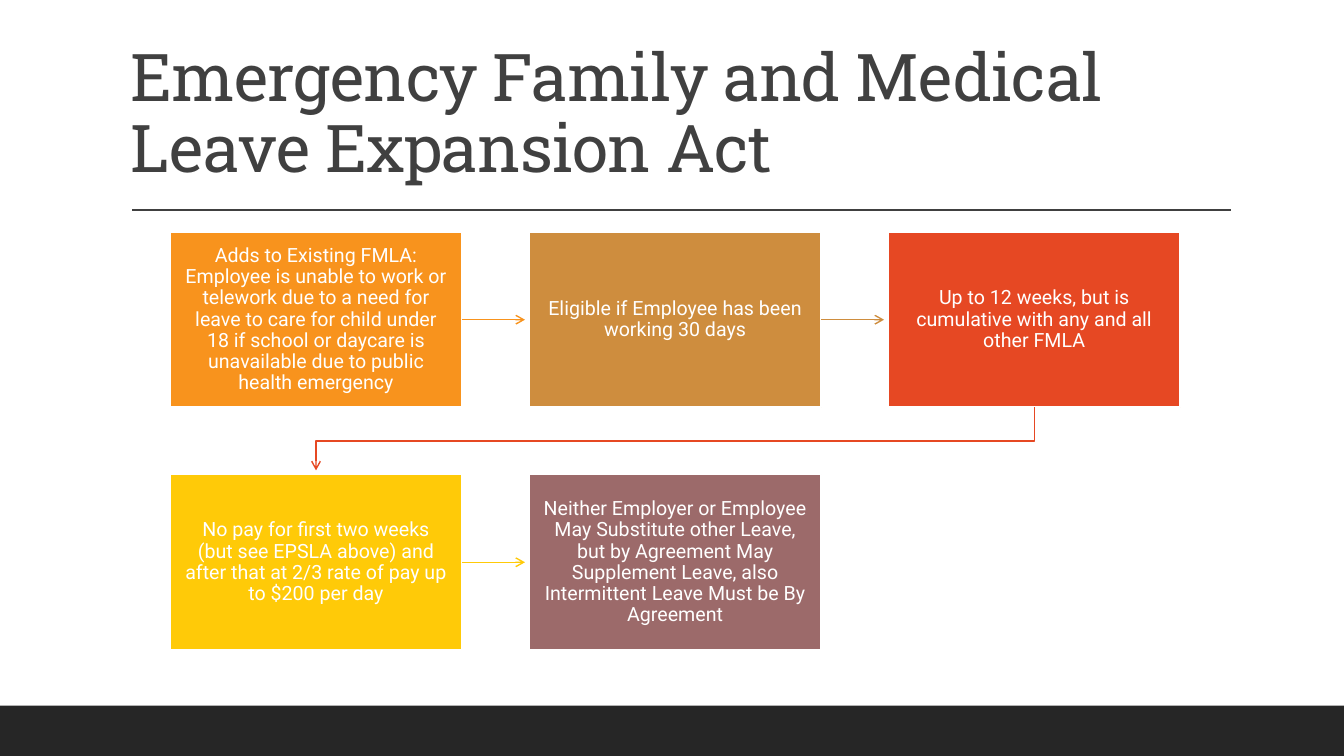
from dataclasses import dataclass

from lxml import etree
from pptx import Presentation
from pptx.dml.color import RGBColor
from pptx.enum.shapes import MSO_CONNECTOR as CONNECTOR, MSO_SHAPE as SHAPE
from pptx.enum.text import MSO_ANCHOR as ANCHOR, PP_ALIGN as ALIGN
from pptx.oxml.ns import qn
from pptx.util import Pt

PX = 9525  # EMU per px, 96 px to the inch
RIGHT_SIDE = 3


@dataclass(frozen=True)
class Theme:
    ink: str = "404040"
    footer: str = "262626"
    white: str = "FFFFFF"
    steps: tuple = ("F8931D", "CE8D3E", "E64823", "FFCA08", "9C6A6A")
    title_font: str = "Roboto Slab"
    body_font: str = "Roboto"
    title_size: int = 47
    body_size: int = 14
    thin: float = 1
    border: float = 1.25


THEME = Theme()
TITLE = "Emergency Family and Medical Leave Expansion Act"
STEPS = (
    "Adds to Existing FMLA: Employee is unable to work or telework due to a need "
    "for leave to care for child under 18 if school or daycare is unavailable due "
    "to public health emergency",
    "Eligible if Employee has been working 30 days",
    "Up to 12 weeks, but is cumulative with any and all other FMLA",
    "No pay for first two weeks (but see EPSLA above) and after that at 2/3 rate "
    "of pay up to $200 per day",
    "Neither Employer or Employee May Substitute other Leave, but by Agreement May "
    "Supplement Leave, also Intermittent Leave Must be By Agreement",
)


def px(*lengths):
    return [length * PX for length in lengths]


def style_line(line, color, width, arrow=False):
    line.color.rgb = RGBColor.from_string(color)
    line.width = Pt(width)
    if arrow:
        etree.SubElement(line._get_or_add_ln(), qn("a:tailEnd"), type="arrow")


def add_block(slide, box, color):
    block = slide.shapes.add_shape(SHAPE.RECTANGLE, *px(*box))
    block.shadow.inherit = False
    block.fill.solid()
    block.fill.fore_color.rgb = RGBColor.from_string(color)
    block.line.fill.background()
    return block


def add_straight(slide, start, end, color, arrow=False):
    straight = slide.shapes.add_connector(CONNECTOR.STRAIGHT, *px(*start, *end))
    style_line(straight.line, color, THEME.thin, arrow)
    etree.SubElement(straight._element.spPr, qn("a:effectLst"))
    return straight


def write(frame, words, font, size, color, align):
    frame.word_wrap = True
    paragraph = frame.paragraphs[0]
    paragraph.alignment = align
    paragraph.line_spacing = 0.9
    paragraph.font.name = font
    paragraph.font.size = Pt(size)
    paragraph.font.color.rgb = RGBColor.from_string(color)
    run = paragraph.add_run()
    run.text = words
    return run


def add_heading(slide, left, top, width, height):
    """Title with the rule below it."""
    frame = slide.shapes.add_textbox(*px(left, top, width, height)).text_frame
    frame.vertical_anchor = ANCHOR.BOTTOM
    run = write(frame, TITLE, THEME.title_font, THEME.title_size, THEME.ink, ALIGN.LEFT)
    run._r.get_or_add_rPr().set("spc", "-50")
    rule_y = top + height + 17
    add_straight(slide, (left + 11, rule_y), (left + width + 1, rule_y), THEME.ink)


def add_step(slide, box, words, color):
    step = add_block(slide, box, color)
    style_line(step.line, THEME.white, THEME.border)
    frame = step.text_frame
    frame.margin_left = frame.margin_right = 13 * PX
    frame.margin_top = frame.margin_bottom = 14 * PX
    frame.vertical_anchor = ANCHOR.MIDDLE
    write(frame, words, THEME.body_font, THEME.body_size, THEME.white, ALIGN.CENTER)
    return step


def add_return_arrow(slide, start, end, color):
    """Bent arrow from the end of one row to the start of the next."""
    (start_x, start_y), (end_x, end_y) = start, end
    turn_y = start_y + 32
    builder = slide.shapes.build_freeform(start_x, start_y, scale=PX)
    builder.add_line_segments(
        [(start_x, turn_y), (end_x, turn_y), (end_x, end_y)], close=False)
    bend = builder.convert_to_shape()
    bend.shadow.inherit = False
    bend.fill.background()
    style_line(bend.line, color, THEME.thin, arrow=True)


def add_flow(slide, left, top, width, height, columns=3, gap=64, clearance=4):
    """Steps in rows, each with an arrow to the next."""
    step_w = (width - (columns - 1) * gap) // columns
    step_h = (height - gap) // 2
    corners = [(left + i % columns * (step_w + gap), top + i // columns * (step_h + gap))
               for i in range(len(STEPS))]
    steps = [add_step(slide, (*corner, step_w, step_h), words, color)
             for corner, words, color in zip(corners, STEPS, THEME.steps)]

    for step, here, after, color in zip(steps, corners, corners[1:], THEME.steps):
        if here[1] == after[1]:
            middle = here[1] + step_h / 2
            arrow = add_straight(
                slide, (here[0] + step_w, int(middle)),
                (after[0] - clearance, int(middle)), color, arrow=True)
            arrow.begin_connect(step, RIGHT_SIDE)
            arrow.end_y = arrow.begin_y
        else:
            add_return_arrow(
                slide, (here[0] + step_w // 2, here[1] + step_h),
                (after[0] + step_w // 2, after[1] - clearance), color)


def main():
    deck = Presentation()
    deck.slide_width, deck.slide_height = px(1280, 720)
    slide = deck.slides.add_slide(deck.slide_layouts[6])
    add_block(slide, (0, 672, 1280, 48), THEME.footer)  # footer band
    add_heading(slide, 115, 30, 1056, 153)
    add_flow(slide, 162, 221, 962, 398)
    deck.save("out.pptx")


if __name__ == "__main__":
    main()
